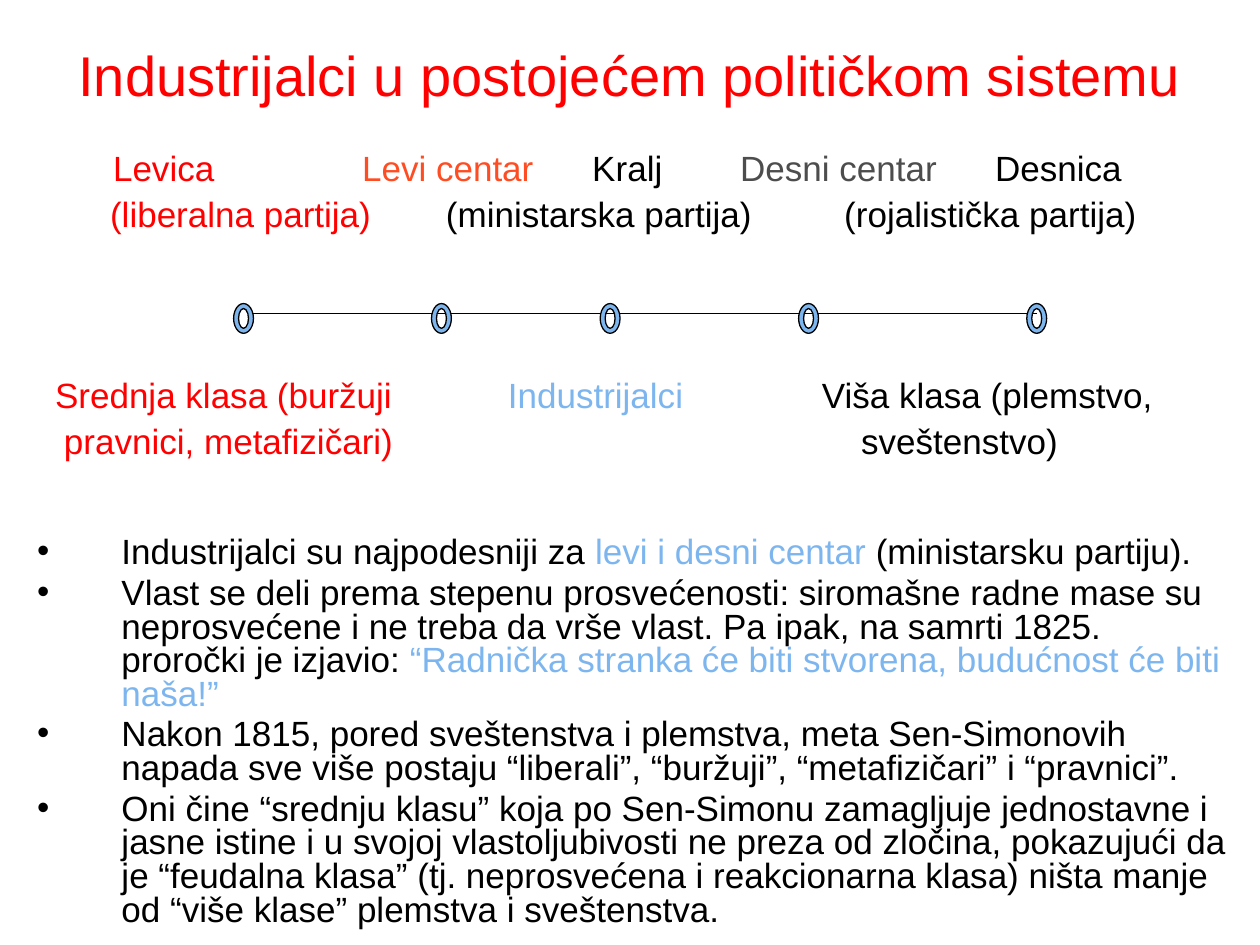
from lxml.etree import SubElement
from pptx import Presentation
from pptx.dml.color import RGBColor
from pptx.enum.shapes import MSO_CONNECTOR, MSO_SHAPE
from pptx.enum.text import MSO_ANCHOR, PP_ALIGN
from pptx.oxml.ns import qn
from pptx.util import Cm, Pt

COLORS = {"red": "FF0000", "orange": "FF4D23", "grey": "4D4D4D",
          "blue": "7DB6EF", "black": "000000"}
INSET = 0.25

# Each row: space before in points, then (left edge on the slide in cm, text, colour)
SPECTRUM_ROWS = [
    (4.8, [(2.28, "Levica", "red"), (7.3, "Levi centar", "orange"),
           (11.94, "Kralj", "black"), (14.92, "Desni centar", "grey"),
           (20.06, "Desnica", "black")]),
    (4.8, [(2.22, "(liberalna partija)", "red"),
           (8.99, "(ministarska partija)", "black"),
           (17.02, "(rojalistička partija)", "black")]),
    (81.6, [(1.11, "Srednja klasa (buržuji", "red"),
            (10.24, "Industrijalci", "blue"),
            (16.57, "Viša klasa (plemstvo,", "black")]),
    (4.8, [(1.29, "pravnici, metafizičari)", "red"),
           (17.36, "sveštenstvo)", "black")]),
]

BULLETS = [
    [("Industrijalci su najpodesniji za ", "black"),
     ("levi i desni centar", "blue"),
     (" (ministarsku partiju).", "black")],
    [("Vlast se deli prema stepenu prosvećenosti: siromašne radne mase su "
      "neprosvećene i ne treba da vrše vlast. Pa ipak, na samrti 1825. "
      "proročki je izjavio: ", "black"),
     ("“Radnička stranka će biti stvorena, budućnost će biti naša!”", "blue")],
    [("Nakon 1815, pored sveštenstva i plemstva, meta Sen-Simonovih napada "
      "sve više postaju “liberali”, “buržuji”, “metafizičari” i “pravnici”.",
      "black")],
    [("Oni čine “srednju klasu” koja po Sen-Simonu zamagljuje jednostavne i "
      "jasne istine i u svojoj vlastoljubivosti ne preza od zločina, "
      "pokazujući da je “feudalna klasa” (tj. neprosvećena i reakcionarna "
      "klasa) ništa manje od “više klase” plemstva i sveštenstva.", "black")],
]

RING_CENTERS = [4.91, 8.9, 12.3, 16.3, 20.9]
RING_W, RING_H, RING_TOP = 0.4, 0.6, 6.12
AXIS_Y = 6.32


def rgb(name):
    return RGBColor.from_string(COLORS[name])


def add_text_frame(s, left, top, width, height, anchor=MSO_ANCHOR.TOP):
    tf = s.shapes.add_textbox(Cm(left), Cm(top), Cm(width), Cm(height)).text_frame
    tf.word_wrap = True
    tf.vertical_anchor = anchor
    return tf


def next_paragraph(tf, first, **formats):
    p = tf.paragraphs[0] if first else tf.add_paragraph()
    for name, value in formats.items():
        setattr(p, name, value)
    return p


def add_run(p, text, color, size=20):
    r = p.add_run()
    r.text = text
    for name, value in {"name": "Arial", "size": Pt(size)}.items():
        setattr(r.font, name, value)
    r.font.color.rgb = rgb(color)


def set_tabs(p, stops):
    tabs = SubElement(p._p.get_or_add_pPr(), qn("a:tabLst"))
    for stop in stops:
        SubElement(tabs, qn("a:tab"), pos=str(Cm(stop)), algn="l")


def set_bullet(p):
    pPr = p._p.get_or_add_pPr()
    pPr.set("marL", str(Cm(1.7)))
    pPr.set("indent", str(-Cm(1.7)))
    SubElement(pPr, qn("a:buFont"), typeface="Arial")
    SubElement(pPr, qn("a:buChar"), char="•")


def add_title(s):
    tf = add_text_frame(s, 0.5, 0.7, 24.4, 1.6, MSO_ANCHOR.MIDDLE)
    p = next_paragraph(tf, True, alignment=PP_ALIGN.CENTER)
    add_run(p, "Industrijalci u postojećem političkom sistemu", "red", 32)


def add_spectrum_labels(s):
    """Set the labels above and below the axis on tab stops."""
    left = 0.5
    tf = add_text_frame(s, left, 2.92, 24.2, 7)
    for i, (space, labels) in enumerate(SPECTRUM_ROWS):
        p = next_paragraph(tf, i == 0, line_spacing=0.9, space_before=Pt(space))
        set_tabs(p, [x - left - INSET for x, _, _ in labels])
        for _, text, color in labels:
            add_run(p, "\t" + text, color)


def add_bullets(s):
    tf = add_text_frame(s, 0.5, 10.72, 24.6, 7.6)
    for i, runs in enumerate(BULLETS):
        p = next_paragraph(tf, i == 0, line_spacing=0.8, space_before=Pt(4))
        set_bullet(p)
        for text, color in runs:
            add_run(p, text, color)


def add_axis(s):
    line = s.shapes.add_connector(
        MSO_CONNECTOR.STRAIGHT, Cm(RING_CENTERS[0] + RING_W / 2), Cm(AXIS_Y),
        Cm(RING_CENTERS[-1]), Cm(AXIS_Y))
    line.line.color.rgb = rgb("black")
    line.line.width = Pt(0.75)
    SubElement(line._element.spPr, qn("a:effectLst"))


def add_ring(s, center):
    sp = s.shapes.add_shape(MSO_SHAPE.DONUT, Cm(center - RING_W / 2),
                            Cm(RING_TOP), Cm(RING_W), Cm(RING_H))
    sp.adjustments[0] = 0.25
    sp.shadow.inherit = False
    sp.fill.solid()
    sp.fill.fore_color.rgb = rgb("blue")
    sp.line.color.rgb = rgb("black")
    sp.line.width = Pt(0.75)


def main():
    prs = Presentation()
    prs.slide_width, prs.slide_height = Cm(25.4), Cm(19.05)
    s = prs.slides.add_slide(prs.slide_layouts[6])
    add_title(s)
    add_bullets(s)
    add_spectrum_labels(s)
    add_axis(s)
    for center in RING_CENTERS:
        add_ring(s, center)
    prs.save("out.pptx")


if __name__ == "__main__":
    main()
